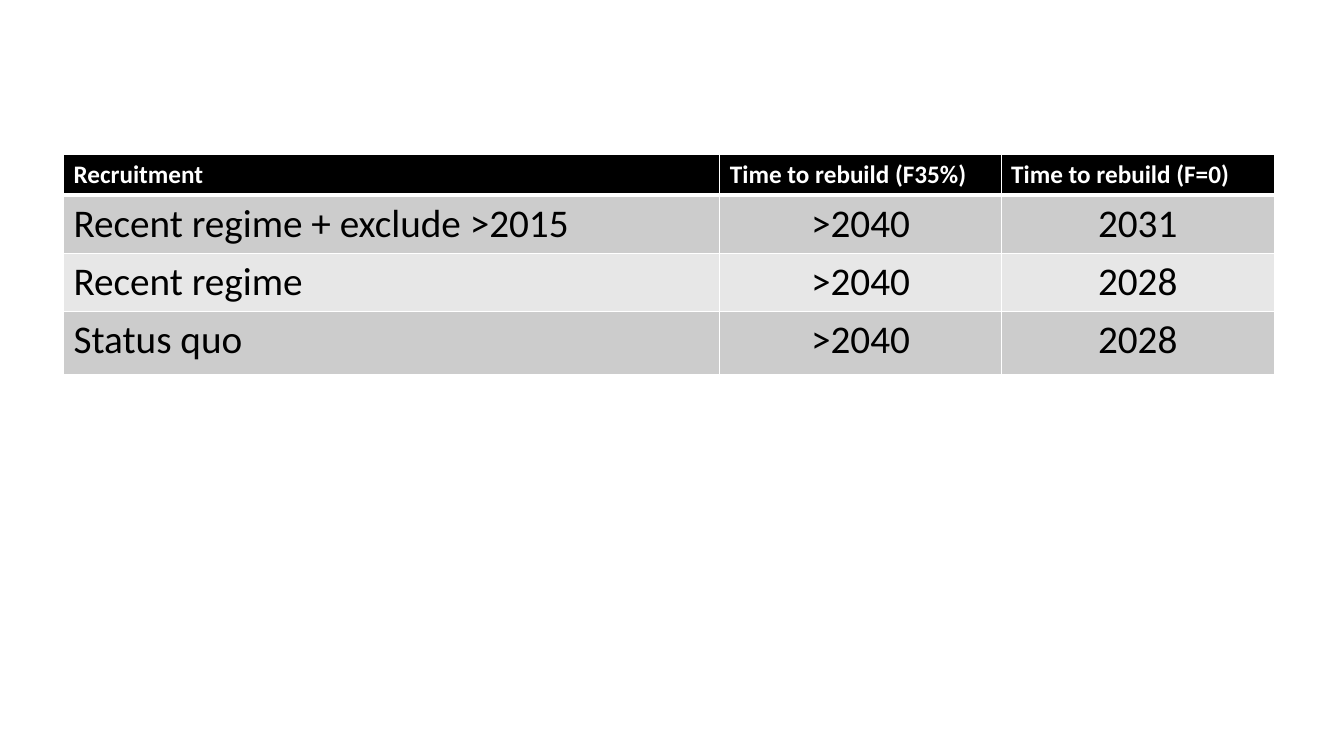
from lxml import etree
from pptx import Presentation
from pptx import util as u
from pptx.dml.color import RGBColor
from pptx.enum import text
from pptx.oxml.ns import qn

PX = 9144  # EMU per px, 100 px to the inch
THEME = {
    "font": "Calibri",
    "border": "FFFFFF",
    "fills": ["000000", "CCCCCC", "E7E7E7", "CCCCCC"],
    "head": {"size": u.Pt(18), "bold": True},
    "body": {"size": u.Pt(28), "bold": False},
    "head_text": "FFFFFF",
    "body_text": "000000",
}
LEFT, TOP = 63, 153
COLS = [651, 279, 271]
ROWS = [29, 41, 41, 63]
DATA = [
    ["Recruitment", "Time to rebuild (F35%)", "Time to rebuild (F=0)"],
    ["Recent regime + exclude >2015", ">2040", "2031"],
    ["Recent regime", ">2040", "2028"],
    ["Status quo", ">2040", "2028"],
]


def add_border(cell, side, points):
    ln = etree.SubElement(cell._tc.get_or_add_tcPr(), qn(f"a:ln{side}"),
                          w=str(u.Pt(points)))
    fill = etree.SubElement(ln, qn("a:solidFill"))
    etree.SubElement(fill, qn("a:srgbClr"), val=THEME["border"])


prs = Presentation()
prs.slide_width, prs.slide_height = 1333 * PX, 750 * PX
s = prs.slides.add_slide(prs.slide_layouts[6])

table = s.shapes.add_table(len(ROWS), len(COLS), LEFT * PX, TOP * PX,
                           sum(COLS) * PX, sum(ROWS) * PX).table
for column, width in zip(table.columns, COLS):
    column.width = width * PX
for row, height in zip(table.rows, ROWS):
    row.height = height * PX

for i, values in enumerate(DATA):
    kind = "body" if i else "head"
    # A thick rule separates the header from the body
    widths = {"L": 1, "R": 1, "T": 3 if i == 1 else 1, "B": 1 if i else 3}
    for j, value in enumerate(values):
        cell = table.cell(i, j)
        for side, points in widths.items():
            add_border(cell, side, points)
        cell.fill.solid()
        cell.fill.fore_color.rgb = RGBColor.from_string(THEME["fills"][i])
        p = cell.text_frame.paragraphs[0]
        p.alignment = text.PP_ALIGN.CENTER if i and j else text.PP_ALIGN.LEFT
        r = p.add_run()
        r.text = value
        for name, setting in {"name": THEME["font"], **THEME[kind]}.items():
            setattr(r.font, name, setting)
        r.font.color.rgb = RGBColor.from_string(THEME[f"{kind}_text"])

prs.save("out.pptx")
